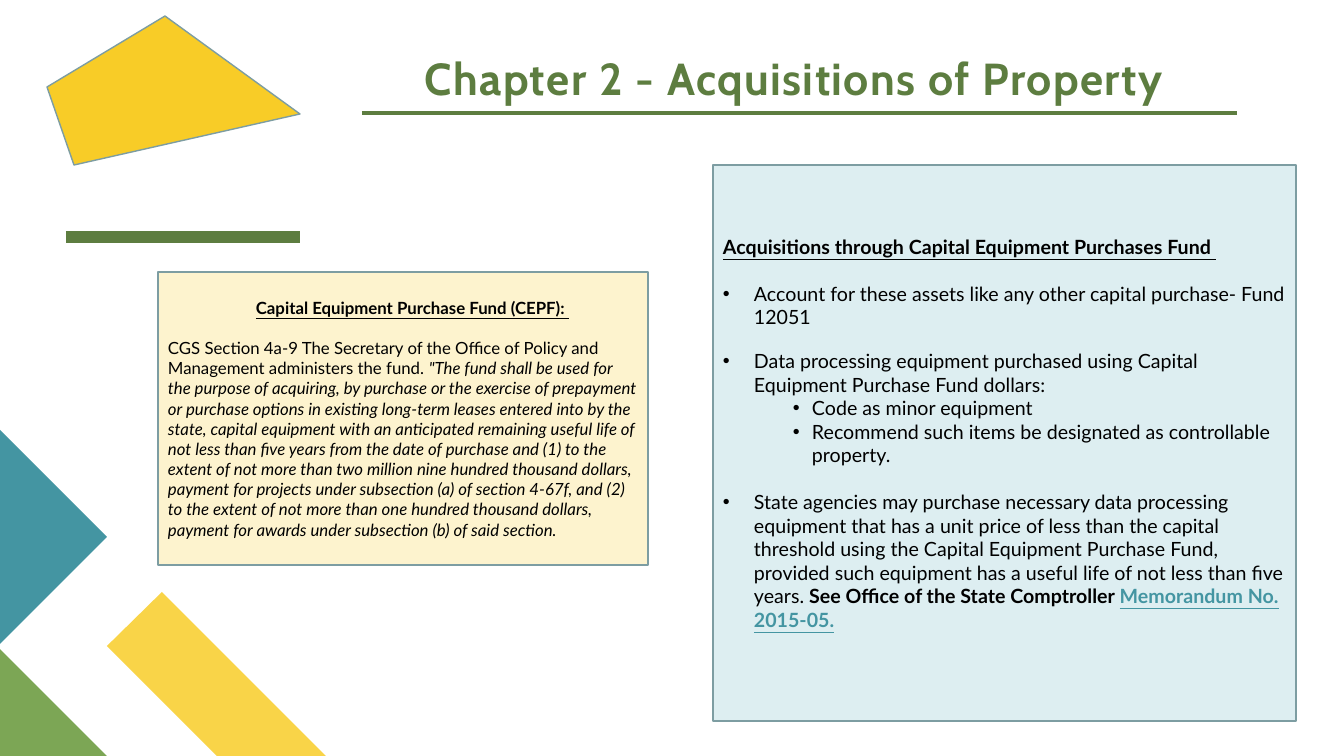
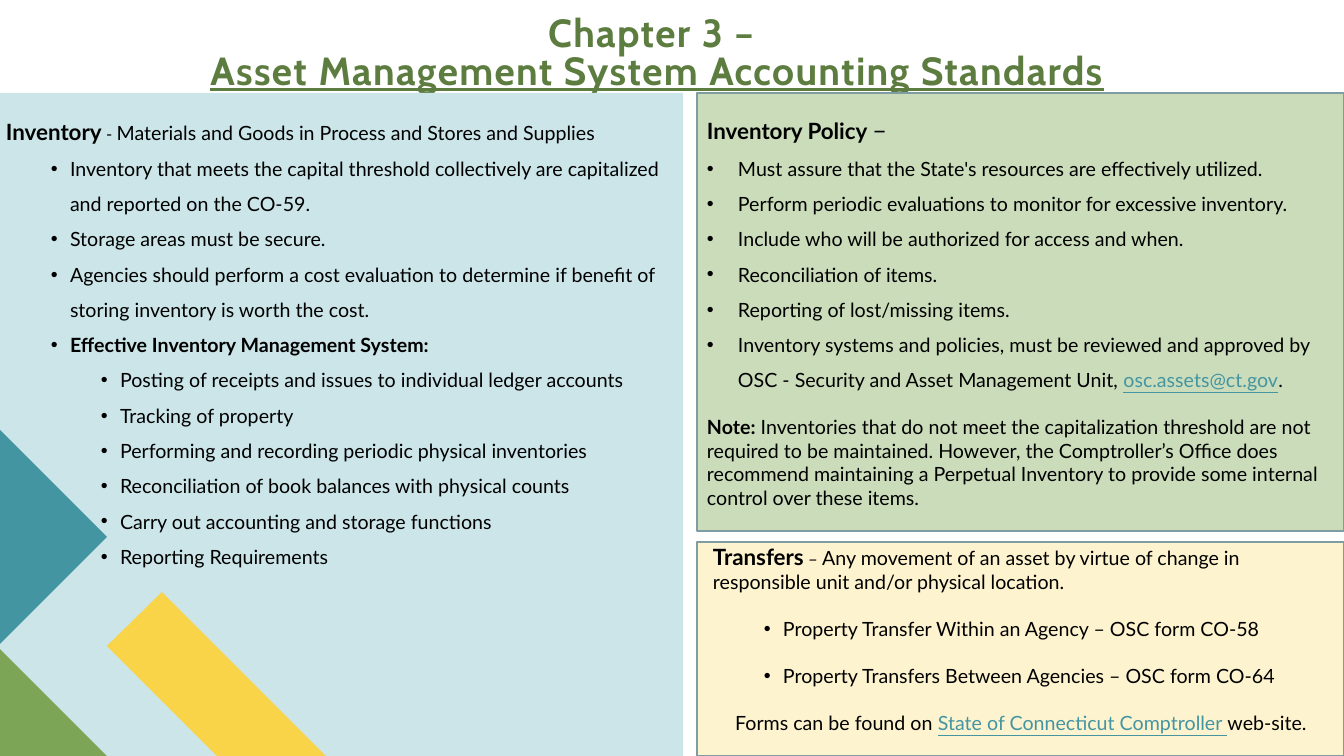
from dataclasses import dataclass, field

from lxml import etree
from pptx import Presentation
from pptx.dml.color import RGBColor
from pptx.enum.shapes import MSO_CONNECTOR, MSO_SHAPE
from pptx.enum.text import MSO_ANCHOR, MSO_AUTO_SIZE, PP_ALIGN
from pptx.oxml.ns import qn
from pptx.util import Emu, Pt

# Shared style
RECT, STRAIGHT = MSO_SHAPE.RECTANGLE, MSO_CONNECTOR.STRAIGHT
LEFT, CENTER = PP_ALIGN.LEFT, PP_ALIGN.CENTER
TOP, MIDDLE, BOTTOM = MSO_ANCHOR.TOP, MSO_ANCHOR.MIDDLE, MSO_ANCHOR.BOTTOM
SLIDE_W, SLIDE_H = 1344, 756
EMU_PER_PX = 12192000 / SLIDE_W
TITLE_FONT, BODY_FONT = "Cabin", "Lato"
BLACK, DARK_GREEN, BORDER, LINK = "000000", "5D7D40", "7D9DA2", "4495A2"
CREAM, PALE_TEAL, SOFT_TEAL, PALE_GREEN = "FDF3CE", "DDEEF1", "CBE5E9", "CBDCBA"
TEAL, GREEN, YELLOW, GOLD = "4495A2", "7CA655", "F9D448", "F8CC27"
LINK_FORMAT = {"color": LINK, "underline": True}
GAP_12, GAP_14 = 14.4, 16.8  # one text line, in points


@dataclass
class Run:
    text: str
    fmt: dict = field(default_factory=dict)


@dataclass
class Para:
    runs: list[Run]
    indent: int = 0
    hang: int = 0
    bullet: bool = False
    level: int = 0
    align: PP_ALIGN = LEFT
    before: float = 0
    spacing: float = 1.0


@dataclass
class Panel:
    box: tuple[int, int, int, int]
    fill: str
    paras: list[Para]
    border: str | None = BORDER
    anchor: MSO_ANCHOR = MIDDLE
    insets: tuple[int, int, int, int] = (10, 5, 10, 5)
    size: int = 14


@dataclass
class Polygon:
    points: list[tuple[int, int]]
    fill: str
    border: str | None = None


CORNER = [
    Polygon([(326, 756), (217, 756), (107, 646), (162, 592)], YELLOW),
    Polygon([(107, 756), (0, 756), (0, 649)], GREEN),
    Polygon([(0, 430), (107, 537), (0, 644)], TEAL),
]


# Helpers
def px(n: int) -> Emu:
    return Emu(round(n * EMU_PER_PX))


def rgb(code: str) -> RGBColor:
    return RGBColor.from_string(code)


def paint(sp, fill: str, border: str | None) -> None:
    sp.shadow.inherit = False
    sp.fill.solid()
    sp.fill.fore_color.rgb = rgb(fill)
    if border:
        sp.line.color.rgb = rgb(border)
        sp.line.width = Pt(1)
    else:
        sp.line.fill.background()


def add_run(p, run: Run, base: dict) -> None:
    r = p.add_run()
    r.text = run.text
    fmt = {**base, **run.fmt}
    r.font.color.rgb = rgb(fmt.pop("color"))
    for name, value in fmt.items():
        setattr(r.font, name, value)


def set_frame(tf, anchor: MSO_ANCHOR, insets: tuple[int, int, int, int]) -> None:
    tf.word_wrap = True
    tf.auto_size = MSO_AUTO_SIZE.NONE
    tf.vertical_anchor = anchor
    for side, inset in zip(("left", "top", "right", "bottom"), insets):
        setattr(tf, f"margin_{side}", px(inset))


def add_para(p, para: Para, size: int) -> None:
    formats = {"level": para.level, "alignment": para.align,
               "space_before": Pt(para.before), "line_spacing": para.spacing}
    for name, value in formats.items():
        setattr(p, name, value)
    pPr = p._p.get_or_add_pPr()
    pPr.set("marL", str(px(para.indent)))
    pPr.set("indent", str(px(-para.hang)))
    if para.bullet:
        etree.SubElement(pPr, qn("a:buFont")).set("typeface", "Arial")
        etree.SubElement(pPr, qn("a:buChar")).set("char", "•")
    base = {"name": BODY_FONT, "size": Pt(size), "color": BLACK}
    for run in para.runs:
        add_run(p, run, base)


def add_panel(s, panel: Panel) -> None:
    sp = s.shapes.add_shape(RECT, *map(px, panel.box))
    paint(sp, panel.fill, panel.border)
    tf = sp.text_frame
    set_frame(tf, panel.anchor, panel.insets)
    for i, para in enumerate(panel.paras):
        add_para(tf.add_paragraph() if i else tf.paragraphs[0], para, panel.size)


def add_polygon(s, polygon: Polygon) -> None:
    points = [(px(x), px(y)) for x, y in polygon.points]
    builder = s.shapes.build_freeform(*points[0], scale=1.0)
    builder.add_line_segments(points[1:], close=True)
    paint(builder.convert_to_shape(), polygon.fill, polygon.border)


def add_corner(s) -> None:
    for polygon in CORNER:
        add_polygon(s, polygon)


def add_rule(s, x1: int, x2: int, y: int, width: int) -> None:
    line = s.shapes.add_connector(STRAIGHT, px(x1), px(y), px(x2), px(y))
    line.line.color.rgb = rgb(DARK_GREEN)
    line.line.width = Pt(width)
    etree.SubElement(line._element.spPr, qn("a:effectLst"))


def add_titled_slide(prs, box: tuple[int, int, int, int], size: int, lines: list[Run]):
    s = prs.slides.add_slide(prs.slide_layouts[5])
    title = s.shapes.title
    title.left, title.top, title.width, title.height = map(px, box)
    set_frame(title.text_frame, BOTTOM, (0, 0, 0, 0))
    p = title.text_frame.paragraphs[0]
    p.alignment, p.line_spacing = CENTER, 0.8
    base = {"name": TITLE_FONT, "size": Pt(size), "bold": True, "color": DARK_GREEN}
    for i, run in enumerate(lines):
        if i:
            p.add_line_break()
        add_run(p, run, base)
    for r in p.runs:
        r.font._element.set("spc", "100")
    return s


def bullets(texts: list[str], **layout) -> list[Para]:
    return [Para([Run(text)], bullet=True, **layout) for text in texts]


def lead(term: str, dash: str, text: str) -> Para:
    return Para([Run(term, {"size": Pt(16), "bold": True}),
                 Run(dash, {"size": Pt(12)}), Run(text)], indent=6)


# Slide content
def acquisitions_slide(prs) -> None:
    s = add_titled_slide(prs, (331, 32, 938, 72), 32,
                         [Run("Chapter 2 - Acquisitions of Property ")])
    add_rule(s, 66, 300, 237, 8)
    add_corner(s)
    heading = {"bold": True, "underline": True}
    main = {"indent": 31, "hang": 31}
    add_panel(s, Panel((713, 165, 583, 556), PALE_TEAL, [
        Para([Run("Acquisitions through Capital Equipment Purchases Fund", heading),
              Run(" ", {"underline": True})]),
        *bullets(["Account for these assets like any other capital purchase- Fund 12051"],
                 before=GAP_14, **main),
        *bullets(["Data processing equipment purchased using Capital Equipment "
                  "Purchase Fund dollars:"], before=GAP_12, **main),
        *bullets(["Code as minor equipment",
                  "Recommend such items be designated as controllable property."],
                 level=1, indent=89, hang=19),
        Para([Run("State agencies may purchase necessary data processing equipment that "
                  "has a unit price of less than the capital threshold using the Capital "
                  "Equipment Purchase Fund, provided such equipment has a useful life of "
                  "not less than five years. "),
              Run("See Office of the State Comptroller ", {"bold": True}),
              Run("Memorandum No. 2015-05.", {"bold": True, **LINK_FORMAT})],
             bullet=True, before=GAP_14, **main),
    ], insets=(10, 5, 10, 25)))
    add_rule(s, 362, 1237, 113, 3)
    add_polygon(s, Polygon([(47, 87), (165, 16), (300, 114), (74, 165)], GOLD, BORDER))
    add_panel(s, Panel((158, 272, 490, 293), CREAM, [
        Para([Run("Capital Equipment Purchase Fund (CEPF): ", heading)],
             indent=38, hang=19, align=CENTER),
        Para([Run("CGS Section 4a-9 The Secretary of the Office of Policy and Management "
                  "administers the fund. "),
              Run("\"The fund shall be used for the purpose of acquiring, by purchase or "
                  "the exercise of prepayment or purchase options in existing long-term "
                  "leases entered into by the state, capital equipment with an anticipated "
                  "remaining useful life of not less than five years from the date of "
                  "purchase and (1) to the extent of not more than two million nine hundred "
                  "thousand dollars, payment for projects under subsection (a) of section "
                  "4-67f, and (2) to the extent of not more than one hundred thousand "
                  "dollars, payment for awards under subsection (b) of said section.",
                  {"italic": True})], before=GAP_12),
    ], size=12))


def standards_slide(prs) -> None:
    s = add_titled_slide(prs, (148, 0, 1018, 93), 28, [
        Run("Chapter 3 – "),
        Run("Asset Management System Accounting Standards", {"underline": True})])
    topic = {"level": 1, "indent": 70, "hang": 19, "spacing": 1.5}
    add_panel(s, Panel((0, 93, 683, 663), SOFT_TEAL, [
        lead("Inventory", " - ", "Materials and Goods in Process and Stores and Supplies"),
        *bullets(["Inventory that meets the capital threshold collectively are "
                  "capitalized and reported on the CO-59.",
                  "Storage areas must be secure.",
                  "Agencies should perform a cost evaluation to determine if benefit of "
                  "storing inventory is worth the cost."], **topic),
        Para([Run("Effective Inventory Management System:", {"bold": True})],
             bullet=True, **topic),
        *bullets(["Posting of receipts and issues to individual ledger accounts",
                  "Tracking of property",
                  "Performing and recording periodic physical inventories",
                  "Reconciliation of book balances with physical counts",
                  "Carry out accounting and storage functions",
                  "Reporting Requirements"],
                 level=2, indent=120, hang=19, spacing=1.5),
    ], border=None, anchor=TOP, insets=(0, 25, 0, 0)))
    add_corner(s)
    add_panel(s, Panel((697, 542, 647, 214), CREAM, [
        lead("Transfers", " – ", "Any movement of an asset by virtue of change in "
             "responsible unit and/or physical location."),
        *bullets(["Property Transfer Within an Agency – OSC form CO-58",
                  "Property Transfers Between Agencies – OSC form CO-64"],
                 level=1, indent=76, hang=19, before=GAP_14),
        Para([Run("Forms can be found on "),
              Run("State of Connecticut Comptroller ", LINK_FORMAT),
              Run("web-site. ")], indent=6, align=CENTER, before=GAP_14),
    ], insets=(10, 0, 10, 20)))
    policy = {"level": 1, "indent": 31, "hang": 31, "spacing": 1.5}
    add_panel(s, Panel((697, 93, 647, 438), PALE_GREEN, [
        Para([Run("Inventory Policy ", {"size": Pt(16), "bold": True}),
              Run("–", {"size": Pt(18)})]),
        *bullets(["Must assure that the State's resources are effectively utilized.",
                  "Perform periodic evaluations to monitor for excessive inventory.",
                  "Include who will be authorized for access and when.",
                  "Reconciliation of items.",
                  "Reporting of lost/missing items."], **policy),
        Para([Run("Inventory systems and policies, must be reviewed and approved by "
                  "OSC - Security and Asset Management Unit, "),
              Run("osc.assets@ct.gov", LINK_FORMAT), Run(".")], bullet=True, **policy),
        Para([Run("Note:", {"bold": True}),
              Run(" Inventories that do not meet the capitalization threshold are not "
                  "required to be maintained. However, the Comptroller’s Office does "
                  "recommend maintaining a Perpetual Inventory to provide some internal "
                  "control over these items.")], before=GAP_14),
    ]))


def main() -> None:
    prs = Presentation()
    prs.slide_width, prs.slide_height = px(SLIDE_W), px(SLIDE_H)
    acquisitions_slide(prs)
    standards_slide(prs)
    prs.save("out.pptx")


if __name__ == "__main__":
    main()
